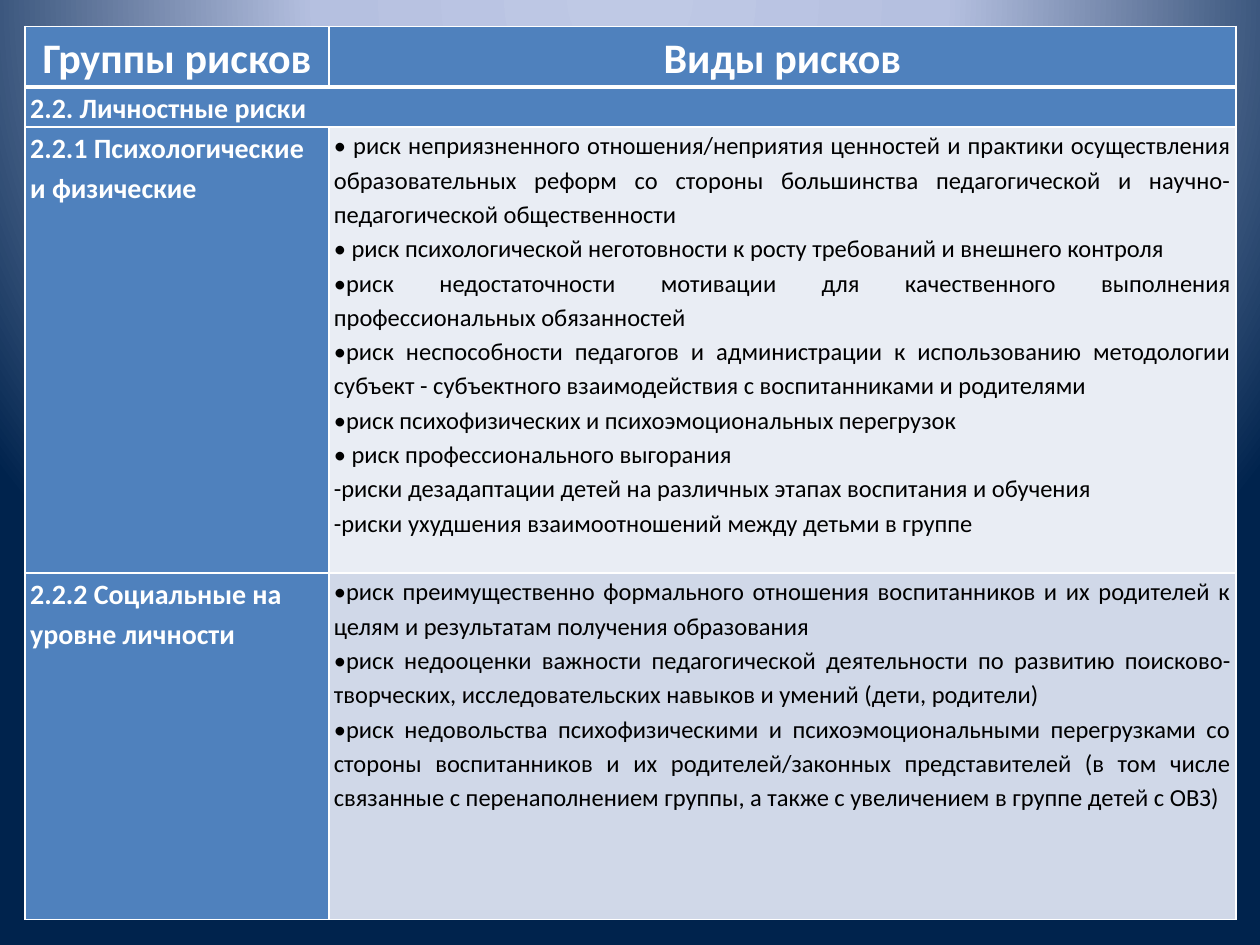
from lxml import etree
from pptx import Presentation
from pptx.dml.color import RGBColor
from pptx.enum.text import PP_ALIGN
from pptx.oxml import parse_xml
from pptx.oxml.ns import nsdecls, qn
from pptx.util import Inches, Pt

LEFT, CENTER, JUSTIFY = PP_ALIGN.LEFT, PP_ALIGN.CENTER, PP_ALIGN.JUSTIFY

FONT = "Calibri"
WHITE = RGBColor(0xFF, 0xFF, 0xFF)
BLACK = RGBColor(0x00, 0x00, 0x00)
BLUE = RGBColor(0x4F, 0x81, 0xBD)
PALE = RGBColor(0xE9, 0xED, 0xF4)
PALE_BLUE = RGBColor(0xD0, 0xD8, 0xE8)
GRADIENT_STOPS = [
    (0, RGBColor(0xBF, 0xC9, 0xE5)),
    (40, RGBColor(0xB5, 0xC0, 0xE0)),
    (100, RGBColor(0x00, 0x23, 0x4D)),
]

COLUMN_WIDTHS = [2.41, 7.2]
ROW_HEIGHTS = [0.48, 0.32, 3.54, 2.75]

HEADERS = ["Группы рисков", "Виды рисков"]
SECTION = "2.2. Личностные риски"
PSYCHOLOGICAL_RISKS = [
    "• риск неприязненного отношения/неприятия ценностей и практики осуществления "
    "образовательных реформ со стороны большинства педагогической и "
    "научно-педагогической общественности",
    "• риск психологической неготовности к росту требований и внешнего контроля",
    "•риск недостаточности мотивации для качественного выполнения "
    "профессиональных обязанностей",
    "•риск неспособности педагогов и администрации к использованию методологии "
    "субъект - субъектного взаимодействия с воспитанниками и родителями",
    "•риск психофизических и психоэмоциональных перегрузок",
    "• риск профессионального выгорания",
    "-риски дезадаптации детей на различных этапах воспитания и обучения",
    "-риски ухудшения взаимоотношений между детьми в группе",
]
SOCIAL_RISKS = [
    "•риск преимущественно формального отношения воспитанников и их родителей к "
    "целям и результатам получения образования",
    "•риск недооценки важности педагогической деятельности по развитию "
    "поисково-творческих, исследовательских навыков и умений (дети, родители)",
    "•риск недовольства психофизическими и психоэмоциональными перегрузками со "
    "стороны воспитанников и их родителей/законных представителей (в том числе "
    "связанные с перенаполнением группы, а также с увеличением в группе детей с ОВЗ)",
]
# Group name, its risks, fill of the risks cell
GROUPS = [
    (["2.2.1 Психологические", "и физические"], PSYCHOLOGICAL_RISKS, PALE),
    (["2.2.2 Социальные на уровне личности"], SOCIAL_RISKS, PALE_BLUE),
]


def set_background(slide):
    """Fill the background with a round gradient centred above the slide."""
    slide.background.fill.gradient()
    stops = "".join(
        f'<a:gs pos="{position * 1000}"><a:srgbClr val="{color}"/></a:gs>'
        for position, color in GRADIENT_STOPS
    )
    gradient = parse_xml(
        f'<a:gradFill {nsdecls("a")} rotWithShape="1"><a:gsLst>{stops}</a:gsLst>'
        '<a:path path="circle">'
        '<a:fillToRect l="50000" t="-80000" r="50000" b="180000"/>'
        "</a:path></a:gradFill>"
    )
    current = next(slide.element.iter(qn("a:gradFill")))
    current.getparent().replace(current, gradient)


def set_borders(cell, bottom):
    """Draw white borders; they must come before the fill in the cell's XML."""
    properties = cell._tc.get_or_add_tcPr()
    widths = {"lnL": 1, "lnR": 1, "lnT": 1, "lnB": bottom}
    for index, (side, width) in enumerate(widths.items()):
        line = etree.Element(qn(f"a:{side}"), w=str(Pt(width)))
        fill = etree.SubElement(line, qn("a:solidFill"))
        etree.SubElement(fill, qn("a:srgbClr"), val=str(WHITE))
        properties.insert(index, line)


def write_text(cell, lines, size=16, color=WHITE, bold=True, align=LEFT):
    frame = cell.text_frame
    for index, line in enumerate(lines):
        paragraph = frame.add_paragraph() if index else frame.paragraphs[0]
        paragraph.alignment = align
        paragraph.line_spacing = 1.15
        run = paragraph.add_run()
        run.text = line
        run.font.name = FONT
        run.font.size = Pt(size)
        run.font.bold = bold
        run.font.color.rgb = color


def format_cell(cell, fill=BLUE, bottom=1):
    cell.margin_left = cell.margin_right = Inches(0.04)
    cell.margin_top = cell.margin_bottom = 0
    cell.fill.solid()
    cell.fill.fore_color.rgb = fill
    set_borders(cell, bottom)


def add_risk_table(slide):
    table = slide.shapes.add_table(
        len(ROW_HEIGHTS), len(COLUMN_WIDTHS), Inches(0.2), Inches(0.21),
        Inches(sum(COLUMN_WIDTHS)), Inches(sum(ROW_HEIGHTS)),
    ).table
    for column, width in zip(table.columns, COLUMN_WIDTHS):
        column.width = Inches(width)
    for row, height in zip(table.rows, ROW_HEIGHTS):
        row.height = Inches(height)

    # Header row
    for index, header in enumerate(HEADERS):
        cell = table.cell(0, index)
        format_cell(cell, bottom=3)
        write_text(cell, [header], size=24, align=CENTER)

    # Section row across both columns
    section = table.cell(1, 0)
    section.merge(table.cell(1, 1))
    for cell in table.rows[1].cells:
        format_cell(cell)
    write_text(section, [SECTION])

    # One row for each group of risks
    for row, (name, risks, fill) in enumerate(GROUPS, start=2):
        name_cell, risks_cell = table.rows[row].cells
        format_cell(name_cell)
        write_text(name_cell, name)
        format_cell(risks_cell, fill=fill)
        write_text(risks_cell, risks, size=14, color=BLACK, bold=False, align=JUSTIFY)


def main():
    presentation = Presentation()
    presentation.slide_width = Inches(10)
    presentation.slide_height = Inches(7.5)
    slide = presentation.slides.add_slide(presentation.slide_layouts[6])
    set_background(slide)
    add_risk_table(slide)
    presentation.save("out.pptx")


if __name__ == "__main__":
    main()
